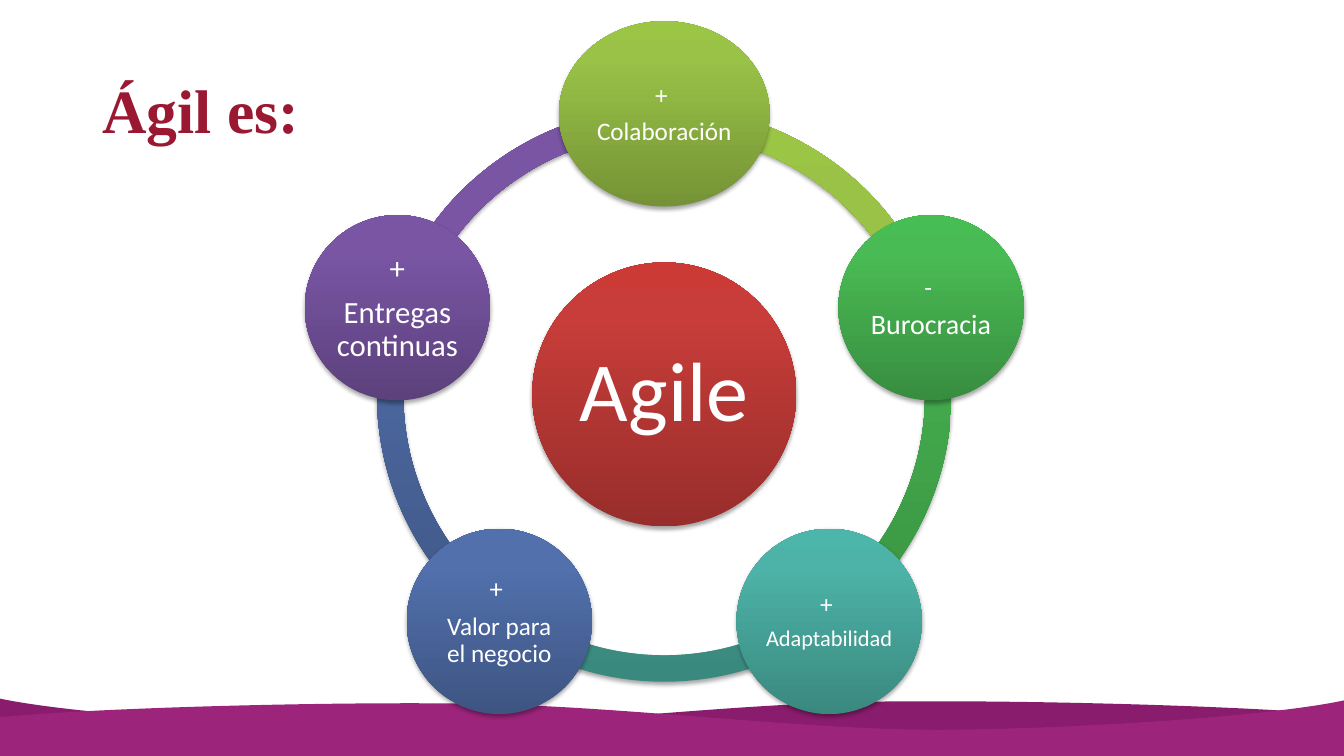
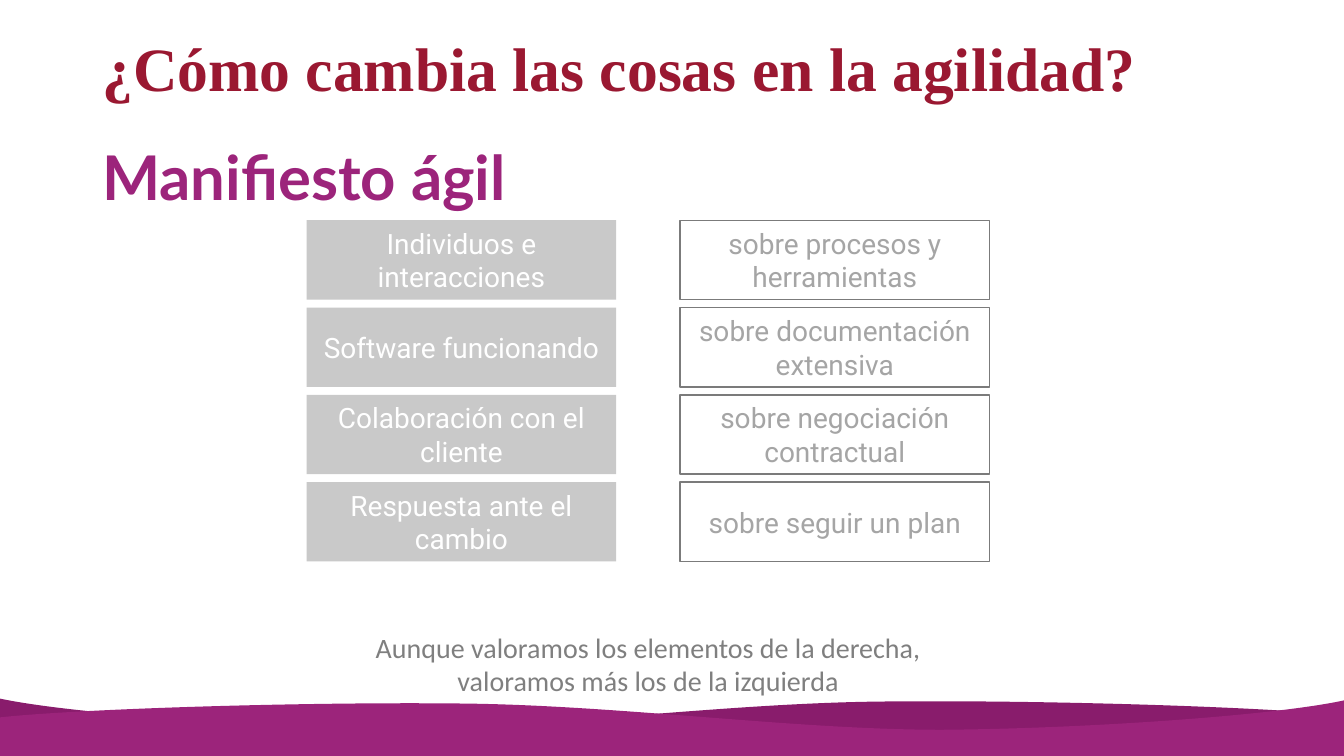
"""Build two slides on agility: a ring of values and the manifesto."""
from math import cos, radians, sin

from lxml.etree import SubElement
from pptx import Presentation
from pptx.dml.color import RGBColor
from pptx.enum.shapes import MSO_SHAPE
from pptx.enum.text import MSO_ANCHOR, PP_ALIGN
from pptx.oxml.ns import qn
from pptx.util import Cm, Pt

WHITE = RGBColor(0xFF, 0xFF, 0xFF)
BLACK = RGBColor(0, 0, 0)
WINE = RGBColor(0x9A, 0x18, 0x31)
PLUM = RGBColor(0x9C, 0x24, 0x7B)
DEEP = RGBColor(0x89, 0x1C, 0x6C)
SILVER = RGBColor(0xC9, 0xC9, 0xC9)
GREY = RGBColor(0xA5, 0xA5, 0xA5)
SLATE = RGBColor(0x7B, 0x7B, 0x7B)
SMOKE = RGBColor(0x7F, 0x7F, 0x7F)
RED = [RGBColor(0x98, 0x2D, 0x2B), RGBColor(0xC8, 0x3D, 0x39), RGBColor(0xCC, 0x3A, 0x36)]
LIME = [RGBColor(0x75, 0x93, 0x36), RGBColor(0x99, 0xC2, 0x47), RGBColor(0x9B, 0xC5, 0x45)]
GREEN = [RGBColor(0x38, 0x8D, 0x3F), RGBColor(0x49, 0xBB, 0x54), RGBColor(0x47, 0xBE, 0x53)]
TEAL = [RGBColor(0x3A, 0x89, 0x7F), RGBColor(0x4D, 0xB3, 0xA8), RGBColor(0x4C, 0xB6, 0xAA)]
BLUE = [RGBColor(0x3E, 0x55, 0x82), RGBColor(0x51, 0x70, 0xAC), RGBColor(0x50, 0x6F, 0xAF)]
VIOLET = [RGBColor(0x5C, 0x41, 0x7C), RGBColor(0x79, 0x55, 0xA4), RGBColor(0x79, 0x55, 0xA6)]

WIDE, HIGH = 33.87, 19.05
WAVE = [(33.87, 18.03), (31.9, 17.81), (26.06, 17.63), (22.1, 17.68),
        (18.15, 17.73), (13.79, 18.34), (10.11, 18.34),
        (6.43, 18.31), (1.73, 17.98), (-0.02, 17.6)]

HUB = (16.74, 9.94)
ORBIT, RING, CORE, NODE = 7.07, 14.48, 6.65, 4.67
NODES = [
    (LIME, 5.31, 0.05, 6.3, [("+ ", 18), ("Colaboración", 18)]),
    (GREEN, NODE, 0.05, 6.3, [("- ", 18), ("Burocracia", 20)]),
    (TEAL, NODE, 0, 6.3, [("+ ", 18), ("Adaptabilidad", 16)]),
    (BLUE, NODE, 0.08, 6.7, [("+ ", 19), ("Valor para el negocio", 18)]),
    (VIOLET, NODE, 0.08, 7.7, [("+", 22), ("Entregas continuas", 22)]),
]
CARDS = [
    (7.73, SILVER, None, WHITE,
     ["Individuos e interacciones", "Software funcionando",
      "Colaboración con el cliente", "Respuesta ante el cambio"]),
    (17.14, WHITE, SLATE, GREY,
     ["sobre procesos y herramientas", "sobre documentación extensiva",
      "sobre negociación contractual", "sobre seguir un plan"]),
]
CLOSING = "Aunque valoramos los elementos de la derecha, valoramos más los de la izquierda"


def write(shape, lines, font, color, align=PP_ALIGN.CENTER, bold=False,
          lead=1.0, gap=0, pad=None, anchor=MSO_ANCHOR.MIDDLE):
    frame = shape.text_frame
    frame.word_wrap = True
    frame.vertical_anchor = anchor
    if pad is not None:
        frame.margin_left = frame.margin_right = Cm(pad)
        frame.margin_top = frame.margin_bottom = Cm(pad)
    for i, (text, size) in enumerate(lines):
        para = frame.add_paragraph() if i else frame.paragraphs[0]
        para.alignment = align
        para.line_spacing = lead
        if i:
            para.space_before = Pt(gap)
        run = para.add_run()
        run.text = text
        run.font.name = font
        run.font.size = Pt(size)
        run.font.bold = bold
        run.font.color.rgb = color


def label(slide, box, *args, **style):
    write(slide.shapes.add_textbox(*map(Cm, box)), *args, **style)


def title(slide, top, text):
    label(slide, (2.33, top, 29.21, 3.68), [(text, 44)], "Times New Roman", WINE,
          align=PP_ALIGN.JUSTIFY, bold=True, lead=0.9)


def paint(shape, color):
    shape.fill.solid()
    shape.fill.fore_color.rgb = color


def plain(shape):
    shape.shadow.inherit = False
    shape.line.fill.background()
    return shape


def add(slide, kind, box):
    return plain(slide.shapes.add_shape(kind, *map(Cm, box)))


def tint(parent, color):
    return SubElement(parent, qn("a:srgbClr"), val=str(color))


def glossy(slide, kind, center, width, height, shades):
    x, y = center
    shape = add(slide, kind, (x - width / 2, y - height / 2, width, height))
    shape.fill.gradient()
    shape.fill.gradient_angle = 90
    props = shape._element.spPr
    stops = props.find(qn("a:gradFill")).find(qn("a:gsLst"))
    for old in list(stops):
        stops.remove(old)
    for pos, color in zip((0, 80000, 100000), shades):
        tint(SubElement(stops, qn("a:gs"), pos=str(pos)), color)
    shade = SubElement(props.find(qn("a:effectLst")), qn("a:outerShdw"), blurRad=str(Pt(3.1)),
                       dist=str(Pt(1.8)), dir="5400000", rotWithShape="0")
    SubElement(tint(shade, BLACK), qn("a:alpha"), val="35000")
    return shape


def bend(shape, count):
    lines = list(shape._element.iter(qn("a:lnTo")))[:count]
    for i in range(0, count, 3):
        arc = lines[i].makeelement(qn("a:cubicBezTo"))
        lines[i].addprevious(arc)
        for line in lines[i:i + 3]:
            arc.append(line[0])
            line.getparent().remove(line)


def waves(slide, layout):
    front = [(WIDE - 0.02 - x, y + 0.05) for x, y in WAVE]
    for points, color in ((WAVE, DEEP), (front, PLUM)):
        trail = points + [(points[-1][0], HIGH), (points[0][0], HIGH)]
        spots = [(Cm(x), Cm(y)) for x, y in trail]
        pen = slide.shapes.build_freeform(*spots[0])
        pen.add_line_segments(spots[1:])
        shape = plain(pen.convert_to_shape())
        paint(shape, color)
        bend(shape, len(points) - 1)
        layout.shapes._spTree.append(shape._element)


def wheel(slide):
    title(slide, 1.02, "Ágil es:")
    turn = 360 / len(NODES)
    angles = [(270 + turn * i) % 360 for i in range(len(NODES))]
    for angle, node in reversed(list(zip(angles, NODES))):
        arc = glossy(slide, MSO_SHAPE.BLOCK_ARC, HUB, RING, RING, node[0])
        arc.adjustments[0] = angle * 0.6
        arc.adjustments[1] = (angle + turn) % 360 * 0.6
        arc.adjustments[2] = 0.046
    core = glossy(slide, MSO_SHAPE.OVAL, HUB, CORE, CORE, RED)
    write(core, [("Agile", 60)], "Calibri", WHITE, lead=0.9, pad=0.2)
    for angle, (shades, width, pad, gap, lines) in zip(angles, NODES):
        spot = (HUB[0] + ORBIT * cos(radians(angle)), HUB[1] + ORBIT * sin(radians(angle)))
        ball = glossy(slide, MSO_SHAPE.OVAL, spot, width, NODE, shades)
        write(ball, lines, "Calibri", WHITE, lead=0.9, gap=gap, pad=pad)


def creed(slide):
    title(slide, -0.04, "¿Cómo cambia las cosas en la agilidad?")
    for left, fill, edge, ink, texts in CARDS:
        for row, text in enumerate(texts):
            card = add(slide, MSO_SHAPE.RECTANGLE, (left, 5.55 + 2.2 * row, 7.8, 2))
            paint(card, fill)
            if edge:
                card.line.color.rgb = edge
                card.line.width = Pt(1)
            write(card, [(text, 20)], "Roboto", ink)
    label(slide, (2.33, 2.72, 29.21, 3.68), [("Manifiesto ágil", 44)], "Lato", PLUM,
          align=PP_ALIGN.LEFT, bold=True, lead=0.9)
    label(slide, (8.93, 15.76, 14.81, 1.8), [(CLOSING, 20)], "Calibri", SMOKE,
          anchor=MSO_ANCHOR.TOP)


def main():
    deck = Presentation()
    deck.slide_width, deck.slide_height = Cm(WIDE), Cm(HIGH)
    blank = deck.slide_layouts[6]
    first, second = [deck.slides.add_slide(blank) for _ in range(2)]
    waves(first, blank)
    wheel(first)
    creed(second)
    deck.save("out.pptx")


if __name__ == "__main__":
    main()
